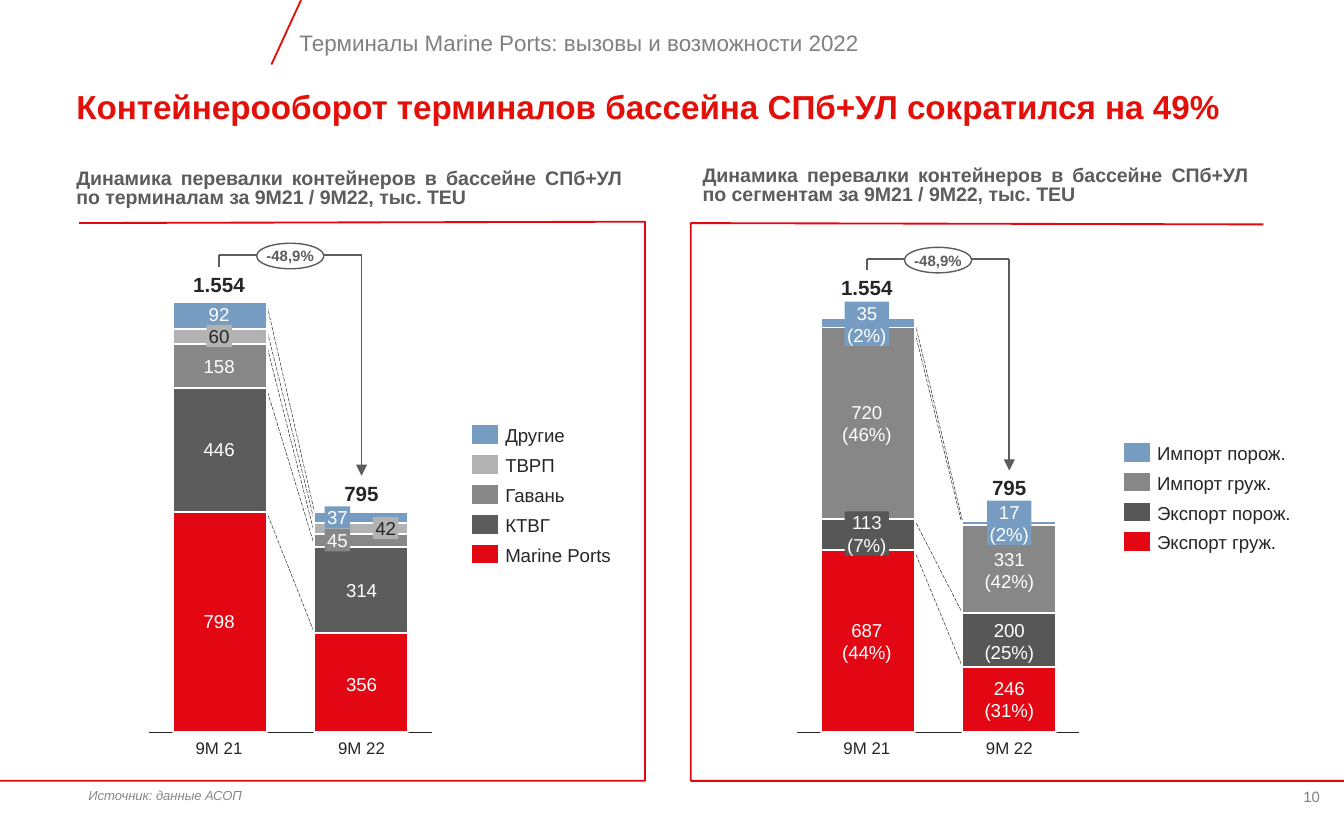
import pptx
import pptx.chart.data
import pptx.dml.color
import pptx.enum.chart
import pptx.enum.dml
import pptx.enum.shapes
import pptx.enum.text
import pptx.oxml
import pptx.oxml.ns
import pptx.util

Inches = pptx.util.Inches
Pt = pptx.util.Pt
colour = pptx.dml.color.RGBColor.from_string
Align = pptx.enum.text.PP_ALIGN
Anchor = pptx.enum.text.MSO_ANCHOR
Preset = pptx.enum.shapes.MSO_SHAPE

RED, TITLE_RED, BLUE, DARK = "E30613", "E31009", "779CC1", "5C5C5C"
CHARCOAL, GREY, SILVER, BLACK, WHITE = "575757", "878787", "B2B2B2", "262626", "FFFFFF"

deck = pptx.Presentation()
deck.slide_width, deck.slide_height = Inches(10), Inches(6.25)
page = deck.slides.add_slide(deck.slide_layouts[6])


def write(place, text, size, ink, bold=False, align=Align.CENTER, anchor=Anchor.MIDDLE,
          inset=0, wrap=False, fill=None, outline=None, preset=Preset.RECTANGLE):
    place = [Inches(value) for value in place]
    if fill:
        box = page.shapes.add_shape(preset, *place)
        box.shadow.inherit = False
        box.fill.solid()
        box.fill.fore_color.rgb = colour(fill)
        if outline:
            box.line.color.rgb = colour(outline)
            box.line.width = Pt(0.75)
        else:
            box.line.fill.background()
    else:
        box = page.shapes.add_textbox(*place)
    frame = box.text_frame
    frame.word_wrap = wrap
    frame.vertical_anchor = anchor
    frame.margin_left = frame.margin_right = Inches(inset)
    frame.margin_top = frame.margin_bottom = Inches(0.05 if wrap else 0)
    para = frame.paragraphs[0]
    para.text = text
    para.alignment = align
    para.font.name = "Arial"
    para.font.size = Pt(size)
    para.font.bold = bold
    para.font.color.rgb = colour(ink)
    return para


def stroke(start, end, ink, width):
    line = page.shapes.add_connector(pptx.enum.shapes.MSO_CONNECTOR.STRAIGHT,
                                     *[Inches(value) for value in (*start, *end)])
    line.line.color.rgb = colour(ink)
    line.line.width = Pt(width)
    properties = line._element.spPr
    properties.append(pptx.oxml.parse_xml(f'<a:effectLst {pptx.oxml.ns.nsdecls("a")}/>'))
    return line


stroke((2.24, 0), (2.02, 0.48), TITLE_RED, 1)
write((2.13, 0.17, 5.98, 0.3), "Терминалы Marine Ports: вызовы и возможности 2022", 12, "807F83",
      align=Align.LEFT, anchor=Anchor.TOP, inset=0.1, wrap=True)
write((9.53, 5.81, 0.39, 0.24), "10", 8, "807F83",
      align=Align.RIGHT, anchor=Anchor.TOP, inset=0.1, wrap=True)
headline = write((0.47, 0.63, 9.4, 0.37),
                 "Контейнерооборот терминалов бассейна СПб+УЛ сократился на 49%",
                 17.8, TITLE_RED, True, Align.LEFT, Anchor.TOP, 0.1, True)
headline.line_spacing = 0.9
headline.space_after = Pt(3)

panels = [
    {
        "heading": "Динамика перевалки контейнеров в бассейне СПб+УЛ \vпо терминалам за 9М21 / 9М22, тыс. TEU",
        "heading_at": (0.47, 1.22),
        "chart_at": (1.02, 2.06, 2.28, 3.48), "bars": (1.63, 2.69),
        "axis": (201, 25), "plot": (0.04, 0.026, 0.921, 0.948),
        "series": [(RED, (100, 45)), (DARK, (56, 39)), (GREY, (20, 6)),
                   (SILVER, (7, 5)), (BLUE, (12, 5))],
        "links": [(2.24, 3.81), (2.43, 3.88), (2.55, 3.97), (2.88, 4.06), (3.8, 4.71)],
        "arrow": (1.99, 1.9, 3.54), "totals": (2.03, 3.58),
        "labels": [
            (0, 0, 2.34, "92", None), (0, 0, 2.5, "60", SILVER), (0, 0, 2.72, "158", None),
            (0, 0, 3.34, "446", None), (0, 0, 4.62, "798", None),
            (1, -0.18, 3.85, "37", BLUE), (1, 0.18, 3.93, "42", SILVER),
            (1, -0.18, 4.02, "45", GREY), (1, 0, 4.39, "314", None), (1, 0, 5.09, "356", None)],
        "legend_at": (3.51, 3.16),
        "legend": ["Другие", "ТВРП", "Гавань", "КТВГ", "Marine Ports"],
        "border": [(0, 5.81), (4.8, 5.81), (4.8, 1.65), (0.59, 1.66)],
    },
    {
        "heading": "Динамика перевалки контейнеров в бассейне СПб+УЛ \vпо сегментам за 9М21 / 9М22, тыс. TEU",
        "heading_at": (5.13, 1.2),
        "chart_at": (5.84, 2.19, 2.28, 3.35), "bars": (6.45, 7.51),
        "axis": (222, 28), "plot": (0.04, 0.027, 0.921, 0.946),
        "series": [(RED, (95, 34)), (CHARCOAL, (16, 28)), (GREY, (100, 46)), (BLUE, (5, 2))],
        "links": [(2.37, 3.87), (2.44, 3.91), (3.86, 4.56), (4.09, 4.96)],
        "arrow": (2.01, 1.93, 3.5), "totals": (2.05, 3.54),
        "labels": [
            (0, 0, 2.41, "35\v(2%)", BLUE), (0, 0, 3.15, "720\v(46%)", None),
            (0, 0, 3.97, "113\v(7%)", CHARCOAL), (0, 0, 4.77, "687\v(44%)", None),
            (1, 0, 3.89, "17\v(2%)", BLUE), (1, 0, 4.24, "331\v(42%)", None),
            (1, 0, 4.77, "200\v(25%)", None), (1, 0, 5.2, "246\v(31%)", None)],
        "legend_at": (8.36, 3.29),
        "legend": ["Импорт порож.", "Импорт груж.", "Экспорт порож.", "Экспорт груж."],
        "border": [(10, 5.81), (5.14, 5.81), (5.14, 1.66), (9.4, 1.67)],
    },
]
label_widths = {2: 0.19, 3: 0.32, 4: 0.33, 5: 0.46}

for panel in panels:
    heading = write((*panel["heading_at"], 4.33, 0.38), panel["heading"], 10.5, DARK, True,
                    Align.JUSTIFY, Anchor.TOP, 0.1, True)
    heading.line_spacing = Pt(10)

    first, second = panel["bars"]
    for start, end in panel["links"]:
        link = stroke((first + 0.35, start), (second - 0.35, end), BLACK, 0.25)
        link.line.dash_style = pptx.enum.dml.MSO_LINE.LONG_DASH

    data = pptx.chart.data.CategoryChartData()
    data.categories = ["1", "2"]
    for number, (shade, values) in enumerate(panel["series"], 1):
        data.add_series(f"Series {number}", values)
    chart = page.shapes.add_chart(pptx.enum.chart.XL_CHART_TYPE.COLUMN_STACKED,
                                  *[Inches(value) for value in panel["chart_at"]], data).chart
    chart.has_legend = chart.has_title = False
    chart.font.name = "Calibri"
    chart.font.size = Pt(10)
    chart.font.color.rgb = colour(BLACK)
    plot = chart.plots[0]
    plot.gap_width, plot.overlap, plot.vary_by_categories = 50, 100, False
    for series, (shade, values) in zip(plot.series, panel["series"]):
        series.format.fill.solid()
        series.format.fill.fore_color.rgb = colour(shade)
        series.format.line.color.rgb = colour(WHITE)
        series.format.line.width = Pt(1)
    marks = pptx.enum.chart.XL_TICK_MARK
    for axis, ink, mark in ((chart.category_axis, BLACK, marks.NONE),
                            (chart.value_axis, WHITE, marks.OUTSIDE)):
        axis.has_major_gridlines = False
        axis.major_tick_mark = mark
        axis.tick_label_position = pptx.enum.chart.XL_TICK_LABEL_POSITION.NONE
        axis.format.line.color.rgb = colour(ink)
        axis.format.line.width = Pt(0.75)
    chart.value_axis.minimum_scale = 0
    chart.value_axis.maximum_scale, chart.value_axis.major_unit = panel["axis"]
    sizes = "".join(f'<c:{tag} val="{value}"/>' for tag, value in zip("xywh", panel["plot"]))
    area = chart._chartSpace.chart.plotArea
    for layout in area.findall(pptx.oxml.ns.qn("c:layout")):
        area.remove(layout)
    area.insert(0, pptx.oxml.parse_xml(
        f'<c:layout {pptx.oxml.ns.nsdecls("c")}><c:manualLayout><c:layoutTarget val="inner"/>'
        f'<c:xMode val="edge"/><c:yMode val="edge"/>{sizes}</c:manualLayout></c:layout>'))

    base, level, tip = panel["arrow"]
    stroke((first, base), (first, level), DARK, 1)
    stroke((first, level), (second, level), DARK, 1)
    arrow = stroke((second, level), (second, tip), DARK, 1)
    arrow.line._get_or_add_ln().append(
        pptx.oxml.parse_xml(f'<a:tailEnd {pptx.oxml.ns.nsdecls("a")} type="triangle"/>'))
    write(((first + second) / 2 - 0.25, level - 0.09, 0.5, 0.19), "-48,9%", 8, DARK, True,
          fill=WHITE, outline=DARK, preset=Preset.OVAL)

    for column, shift, middle, text, fill in panel["labels"]:
        lines = text.split("\v")
        width = label_widths[max(len(line) for line in lines)]
        height = 0.165 * len(lines)
        write((panel["bars"][column] + shift - width / 2, middle - height / 2, width, height),
              text, 10, BLACK if fill == SILVER else WHITE, fill=fill)

    for center, top, total, period in zip(panel["bars"], panel["totals"],
                                          ("1.554", "795"), ("9M 21", "9M 22")):
        write((center - 0.25, top, 0.5, 0.18), total, 11, BLACK, True, anchor=Anchor.BOTTOM)
        write((center - 0.25, 5.49, 0.5, 0.15), period, 9, BLACK, anchor=Anchor.TOP)

    left, top = panel["legend_at"]
    shades = [shade for shade, values in reversed(panel["series"])]
    for row, (shade, name) in enumerate(zip(shades, panel["legend"])):
        y = top + 0.222 * row
        write((left, y, 0.2, 0.15), "", 10, BLACK, fill=shade, outline=WHITE)
        write((left + 0.25, y - 0.005, 1.04, 0.17), name, 10, BLACK, align=Align.LEFT)

    corners = [(Inches(x), Inches(y)) for x, y in panel["border"]]
    outline = page.shapes.build_freeform(*corners[0])
    outline.add_line_segments(corners[1:], close=False)
    border = outline.convert_to_shape()
    border.shadow.inherit = False
    border.fill.background()
    border.line.color.rgb = colour(RED)
    border.line.width = Pt(1)

source = write((0.56, 5.81, 5.72, 0.22), "Источник: данные АСОП", 7, GREY,
               align=Align.LEFT, anchor=Anchor.TOP, inset=0.1, wrap=True)
source.font.italic = True

deck.save("out.pptx")
